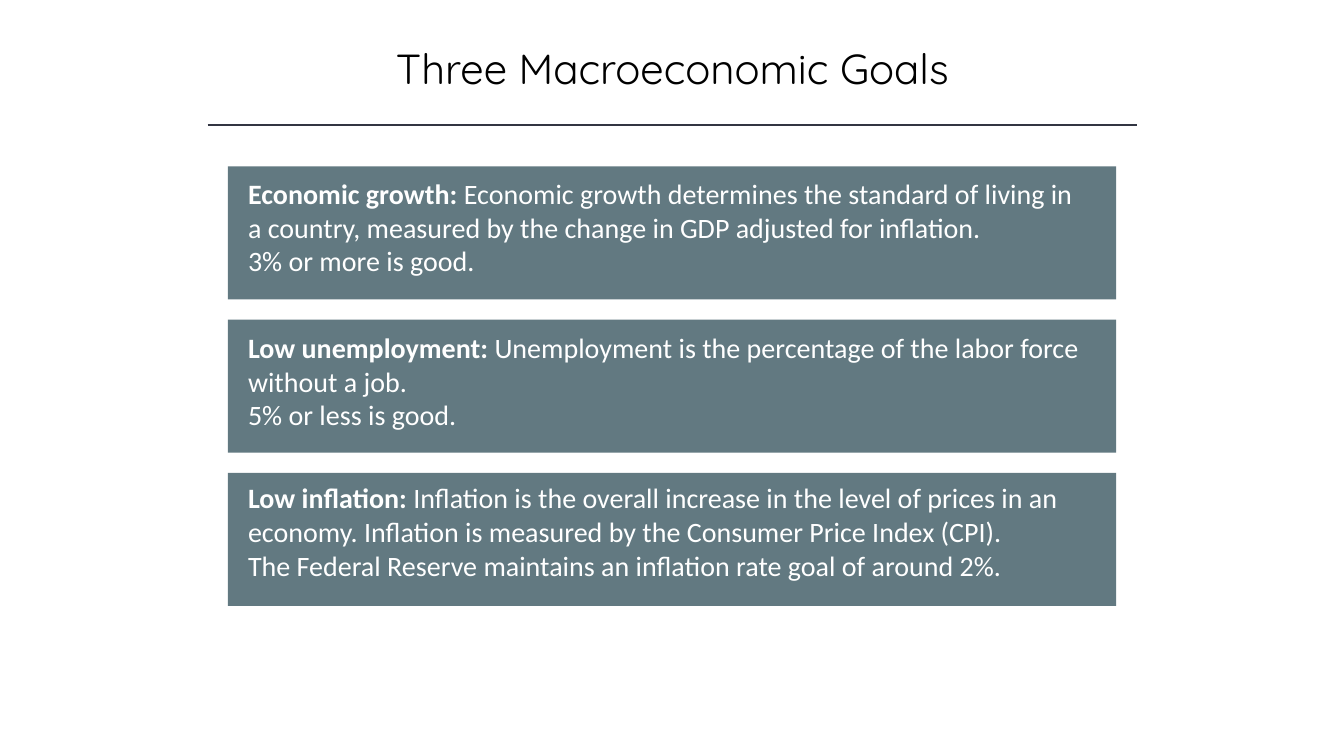
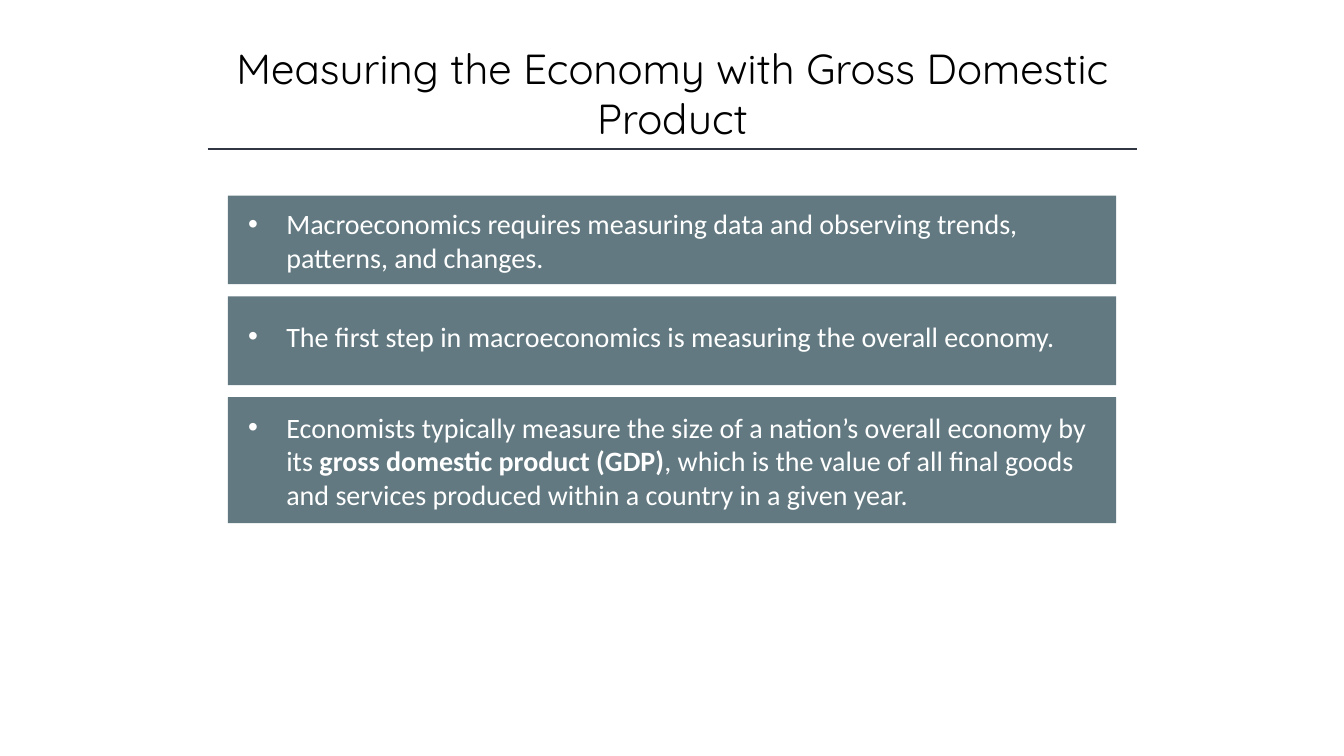
from lxml.etree import SubElement
from pptx import Presentation
from pptx.dml.color import RGBColor
from pptx.enum.shapes import MSO_CONNECTOR, MSO_SHAPE
from pptx.enum.text import MSO_ANCHOR, MSO_AUTO_SIZE, PP_ALIGN
from pptx.oxml.ns import qn
from pptx.util import Inches, Pt

COLORS = {"title": "000000", "rule": "323542", "card": "627981", "card_text": "FFFFFF"}
TITLE_FONT, BODY_FONT = "Quicksand", "Calibri"
SLIDE_WIDTH, SLIDE_HEIGHT = 13.33, 7.5
TITLE_LEFT, TITLE_TOP, TITLE_WIDTH = 1.67, 0.37, 10
RULE_LEFT, RULE_RIGHT = 2.06, 11.28
CARD_LEFT, CARD_WIDTH = 2.26, 8.81
BULLET_INDENT = 0.38

# Each card is (height, text inset from the top, paragraphs); ** marks bold words.
GOALS = [
    (1.32, 0.1, [
        "**Economic growth: **Economic growth determines the standard of living in a country, "
        "measured by the change in GDP adjusted for inflation.",
        "3% or more is good."]),
    (1.32, 0.11, [
        "**Low unemployment: **Unemployment is the percentage of the labor force without a job.",
        "5% or less is good."]),
    (1.32, 0.08, [
        "**Low inflation: **Inflation is the overall increase in the level of prices in an "
        "economy. Inflation is measured by the Consumer Price Index (CPI).",
        "The Federal Reserve maintains an inflation rate goal of around 2%."]),
]
MEASURES = [
    (0.88, 0.11, ["Macroeconomics requires measuring data and observing trends, patterns, "
                  "and changes."]),
    (0.88, 0.23, ["The first step in macroeconomics is measuring the overall economy."]),
    (1.25, 0.13, ["Economists typically measure the size of a nation’s overall economy by its "
                  "**gross domestic product (GDP)**, which is the value of all final goods and "
                  "services produced within a country in a given year."]),
]


def rgb(name):
    return RGBColor.from_string(COLORS[name])


def add_bullet(para):
    properties = para._p.get_or_add_pPr()
    properties.set("marL", str(Inches(BULLET_INDENT)))
    properties.set("indent", str(-Inches(BULLET_INDENT)))
    SubElement(properties, qn("a:buFont")).set("typeface", "Arial")
    SubElement(properties, qn("a:buChar")).set("char", "•")


def write_text(frame, paragraphs, *, font, size, color, align=PP_ALIGN.LEFT,
               margins=(0.1, 0.05, 0.1, 0.05), bullets=False):
    """Fill a frame; margins are left, top, right and bottom in inches."""
    frame.word_wrap = True
    frame.auto_size = MSO_AUTO_SIZE.NONE
    frame.vertical_anchor = MSO_ANCHOR.TOP
    (frame.margin_left, frame.margin_top,
     frame.margin_right, frame.margin_bottom) = map(Inches, margins)
    for index, text in enumerate(paragraphs):
        para = frame.add_paragraph() if index else frame.paragraphs[0]
        para.alignment = align
        if bullets:
            add_bullet(para)
        for part, words in enumerate(text.split("**")):
            if words:
                span = para.add_run()
                span.text = words
                span.font.name = font
                span.font.size = Pt(size)
                span.font.bold = part % 2 == 1
                span.font.color.rgb = rgb(color)


def add_title(page, text, height):
    title = page.shapes.title
    title.left, title.top = Inches(TITLE_LEFT), Inches(TITLE_TOP)
    title.width, title.height = Inches(TITLE_WIDTH), Inches(height)
    write_text(title.text_frame, [text], font=TITLE_FONT, size=30, color="title",
               align=PP_ALIGN.CENTER)


def add_rule(page, top):
    rule = page.shapes.add_connector(MSO_CONNECTOR.STRAIGHT, Inches(RULE_LEFT), Inches(top),
                                     Inches(RULE_RIGHT), Inches(top))
    rule.line.color.rgb = rgb("rule")
    rule.line.width = Pt(1)
    SubElement(rule._element.spPr, qn("a:effectLst"))


def add_card(page, top, height, inset, paragraphs, bullets):
    card = page.shapes.add_shape(MSO_SHAPE.RECTANGLE, Inches(CARD_LEFT), Inches(top),
                                 Inches(CARD_WIDTH), Inches(height))
    card.shadow.inherit = False
    card.fill.solid()
    card.fill.fore_color.rgb = rgb("card")
    card.line.fill.background()
    write_text(card.text_frame, paragraphs, font=BODY_FONT, size=20, color="card_text",
               margins=(0.2, inset, 0.27, 0.05), bullets=bullets)


def add_card_slide(deck, title, cards, *, title_height, rule_top, top, gap, bullets=False):
    page = deck.slides.add_slide(deck.slide_layouts.get_by_name("Title Only"))
    add_title(page, title, title_height)
    add_rule(page, rule_top)
    for height, inset, paragraphs in cards:
        add_card(page, top, height, inset, paragraphs, bullets)
        top += height + gap


def main():
    deck = Presentation()
    deck.slide_width, deck.slide_height = Inches(SLIDE_WIDTH), Inches(SLIDE_HEIGHT)
    add_card_slide(deck, "Three Macroeconomic Goals", GOALS,
                   title_height=0.61, rule_top=1.24, top=1.65, gap=0.2)
    add_card_slide(deck, "Measuring the Economy with Gross Domestic Product", MEASURES,
                   title_height=1.11, rule_top=1.48, top=1.94, gap=0.12, bullets=True)
    deck.save("out.pptx")


if __name__ == "__main__":
    main()
